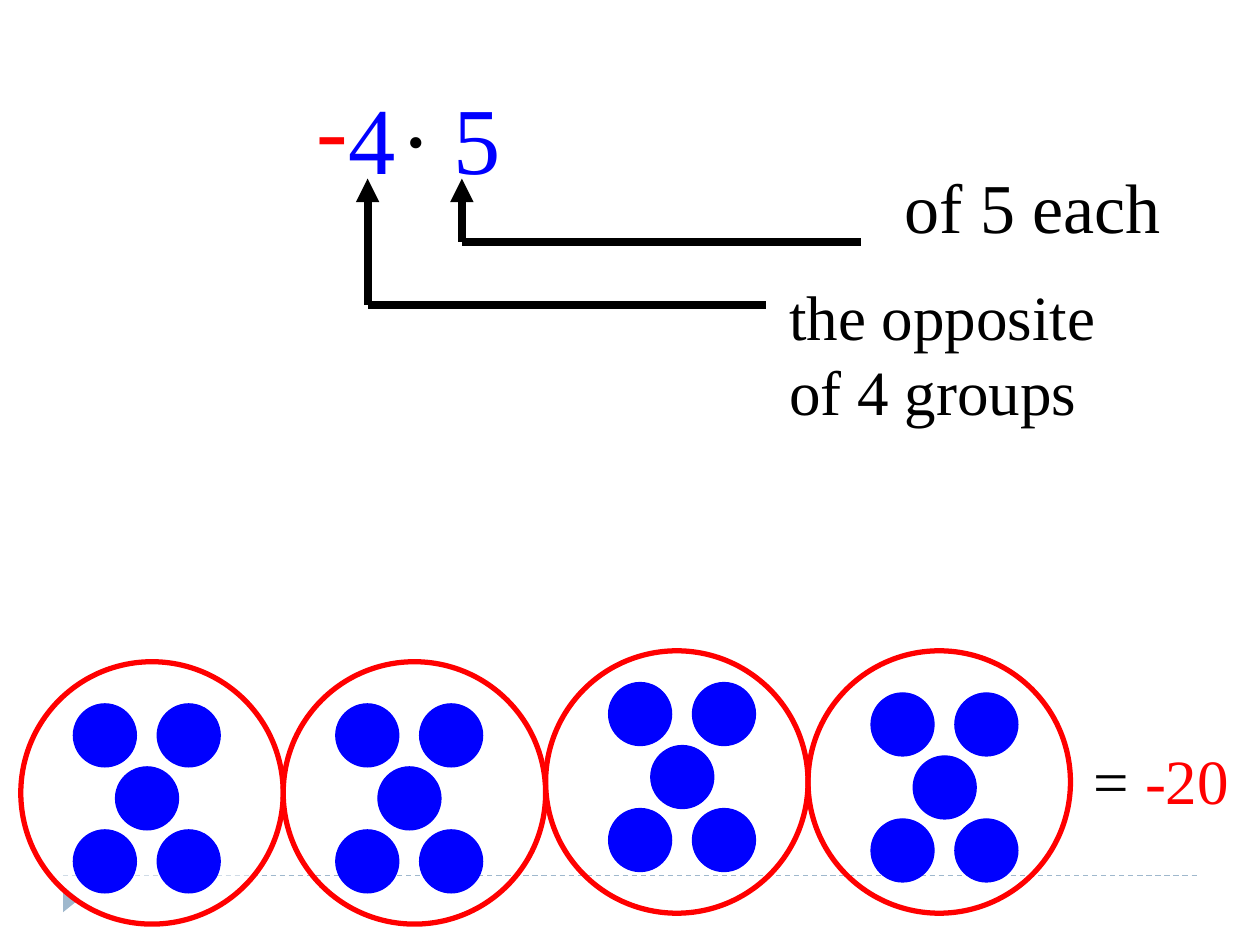
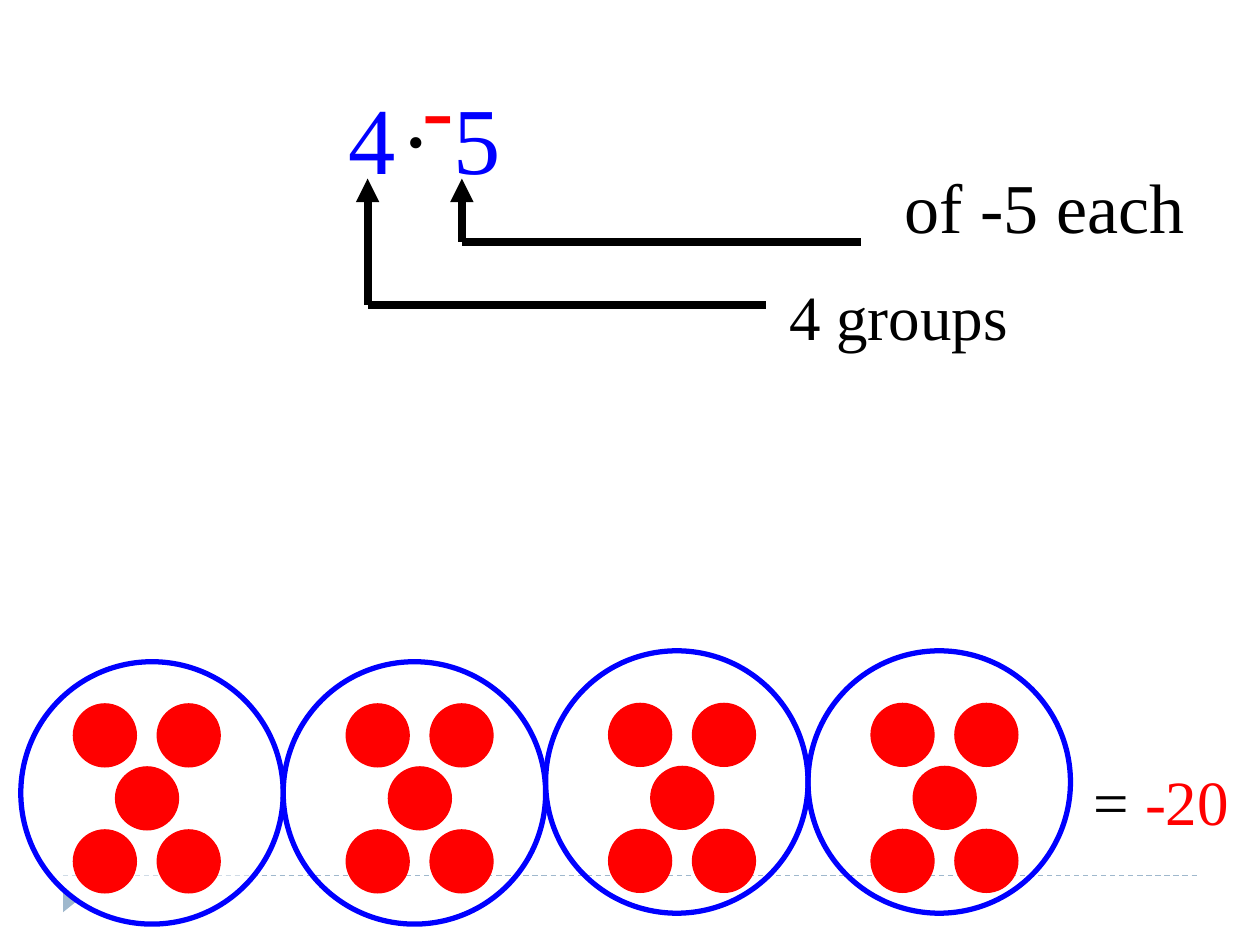
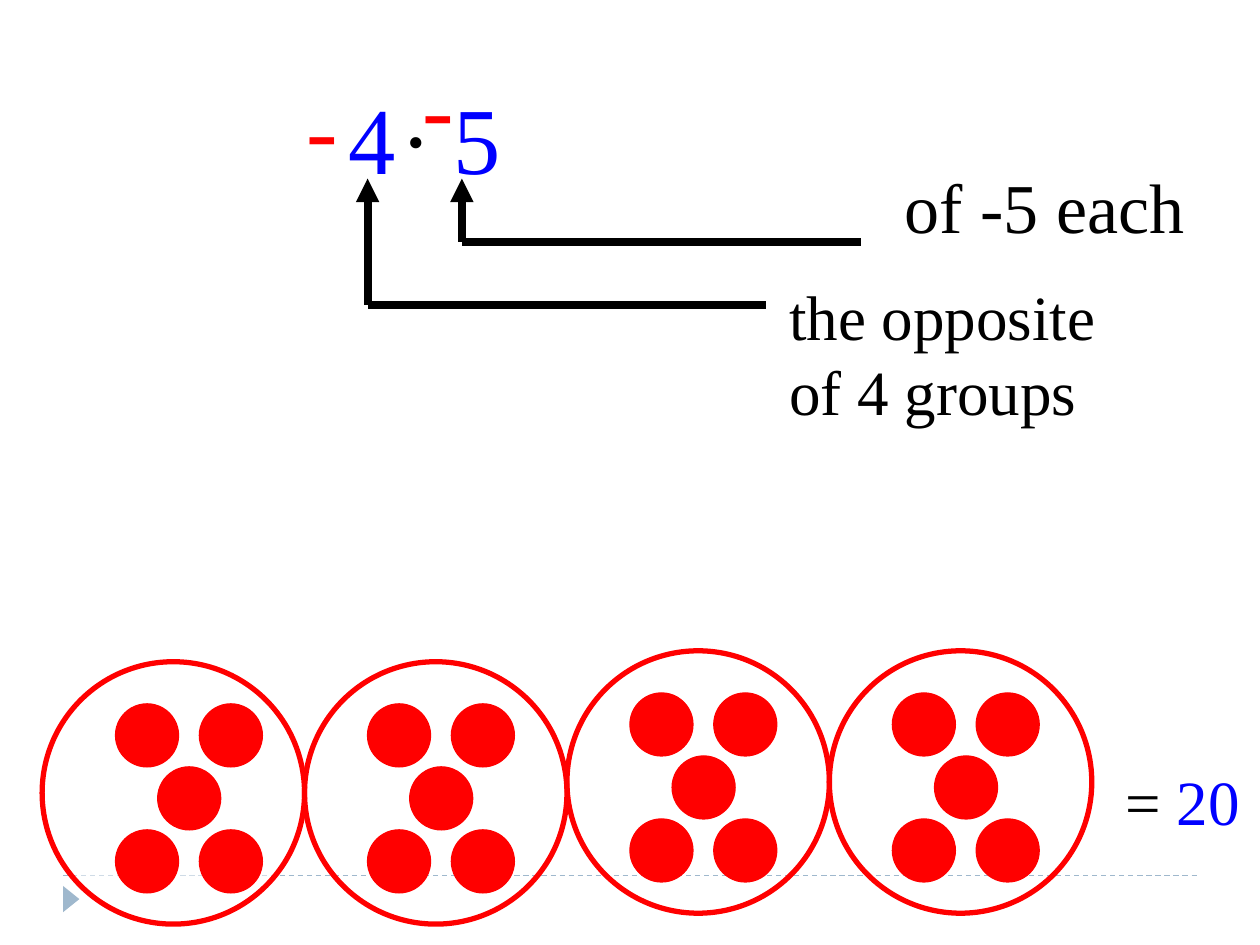
from dataclasses import dataclass

from lxml import etree
from pptx import Presentation
from pptx.dml.color import RGBColor
from pptx.enum import dml, shapes, text
from pptx.oxml import ns
from pptx.util import Cm, Pt

RED = RGBColor(0xFF, 0x00, 0x00)
BLUE = RGBColor(0x00, 0x00, 0xFF)
BLACK = RGBColor(0x00, 0x00, 0x00)
WHITE = RGBColor(0xFF, 0xFF, 0xFF)
STEEL = RGBColor(0x9F, 0xB8, 0xCD)
FONT = "Times New Roman"

RING_SIZE = 5.29
COUNTER_SIZE = 1.27
COUNTER_POSITIONS = [(0, 0), (1.69, 0), (0.85, 1.27), (0, 2.54), (1.69, 2.54)]
RING_TOPS = [13.34, 13.34, 13.12, 13.12]


@dataclass
class Product:
    minus_positions: list
    each_label: str
    groups_label: str
    groups_height: float
    ring_color: RGBColor
    counter_color: RGBColor
    rings_left: float
    counter_offsets: list
    result: str
    result_color: RGBColor
    result_position: tuple


FIRST_MINUS = (6.14, 1.27)
SECOND_MINUS = (8.26, 0.85)

PRODUCTS = [
    Product([FIRST_MINUS], "of 5 each", "the opposite of 4 groups", 3.3, RED, BLUE, 0.42,
            [(1.06, 0.85), (1.06, 0.85), (1.27, 0.64), (1.27, 0.85)],
            "-20", RED, (21.8, 14.82)),
    Product([SECOND_MINUS], "of -5 each", "4 groups", 1.78, BLUE, RED, 0.42,
            [(1.06, 0.85), (1.27, 0.85), (1.27, 1.06), (1.27, 1.06)],
            "-20", RED, (21.8, 15.24)),
    Product([(5.93, 1.27), SECOND_MINUS], "of -5 each", "the opposite of 4 groups", 3.3,
            RED, RED, 0.85,
            [(1.48, 0.85), (1.27, 0.85), (1.27, 0.85), (1.27, 0.85)],
            "20", BLUE, (22.44, 15.24)),
]


def add_label(slide, left, top, width, height, size, *parts):
    """Add one line of text made of (wording, colour) parts."""
    box = slide.shapes.add_textbox(Cm(left), Cm(top), Cm(width), Cm(height))
    frame = box.text_frame
    frame.word_wrap = True
    frame.auto_size = text.MSO_AUTO_SIZE.SHAPE_TO_FIT_TEXT
    paragraph = frame.paragraphs[0]
    properties = paragraph._p.get_or_add_pPr()
    spacing = etree.SubElement(properties, ns.qn("a:spcBef"))
    etree.SubElement(spacing, ns.qn("a:spcPct"), val="50000")
    for wording, color in parts:
        run = paragraph.add_run()
        run.text = wording
        run.font.name = FONT
        run.font.size = Pt(size)
        run.font.color.rgb = color


def add_line(slide, start, end, color=BLACK, width=4.5, arrow=False):
    line = slide.shapes.add_connector(
        shapes.MSO_CONNECTOR.STRAIGHT, *(Cm(value) for value in (*start, *end)))
    line.line.color.rgb = color
    line.line.width = Pt(width)
    if arrow:
        etree.SubElement(line.line._get_or_add_ln(), ns.qn("a:tailEnd"), type="triangle")
    etree.SubElement(line._element.spPr, ns.qn("a:effectLst"))
    return line


def add_circle(slide, left, top, size, line_color, line_width, fill=None):
    circle = slide.shapes.add_shape(
        shapes.MSO_SHAPE.OVAL, Cm(left), Cm(top), Cm(size), Cm(size))
    circle.shadow.inherit = False
    circle.line.color.rgb = line_color
    circle.line.width = Pt(line_width)
    if fill is None:
        circle.fill.background()
    else:
        circle.fill.solid()
        circle.fill.fore_color.rgb = fill
    return circle


def move_footer_to_layout(slide):
    """Draw the dashed rule and marker and hand them to the slide's layout."""
    layout = slide.slide_layout
    for placeholder in list(layout.placeholders):
        placeholder.element.getparent().remove(placeholder.element)
    rule = add_line(slide, (1.27, 17.65), (24.13, 17.65), STEEL, 0.75)
    rule.line.dash_style = dml.MSO_LINE.DASH
    marker = slide.shapes.add_shape(
        shapes.MSO_SHAPE.ISOSCELES_TRIANGLE, Cm(1.17), Cm(17.96), Cm(0.53), Cm(0.33))
    marker.rotation = 90
    marker.shadow.inherit = False
    marker.fill.solid()
    marker.fill.fore_color.rgb = STEEL
    marker.line.fill.background()
    for shape in (rule, marker):
        layout.shapes.element.append(shape.element)


def add_equation(slide, minus_positions):
    for symbol, left, color in [("4", 6.78, BLUE), ("·", 7.82, BLACK), ("5", 8.89, BLUE)]:
        add_label(slide, left, 1.48, 1.69, 2.54, 54, (symbol, color))
    for left, top in minus_positions:
        add_label(slide, left, top, 1.27, 2.54, 54, ("-", RED))


def add_callout(slide, left, bottom):
    """Add an arrow up to a factor and the line from its foot to the label."""
    add_line(slide, (left, bottom), (left, 3.6), arrow=True)
    add_line(slide, (left, bottom), (left + 8.04, bottom))


def add_explanations(slide, product):
    add_callout(slide, 7.41, 6.14)
    add_callout(slide, 9.31, 4.87)
    add_label(slide, 17.99, 3.18, 6.99, 1.96, 40, (product.each_label, BLACK))
    add_label(slide, 15.66, 5.46, 6.99, product.groups_height, 36,
              (product.groups_label, BLACK))


def add_group(slide, left, top, offset, product, veiled):
    """Add a ring of five counters; a veiled ring is half-transparent white."""
    ring = add_circle(slide, left, top, RING_SIZE, product.ring_color, 3,
                      WHITE if veiled else None)
    if veiled:
        color = ring._element.spPr.find(f".//{ns.qn('a:srgbClr')}")
        etree.SubElement(color, ns.qn("a:alpha"), val="50000")
    for x, y in COUNTER_POSITIONS:
        add_circle(slide, left + offset[0] + x, top + offset[1] + y, COUNTER_SIZE,
                   product.counter_color, 0.75, product.counter_color)


def add_counters(slide, product):
    for index, (top, offset) in enumerate(zip(RING_TOPS, product.counter_offsets)):
        add_group(slide, product.rings_left + index * RING_SIZE, top, offset, product,
                  veiled=index == 0)
    add_label(slide, *product.result_position, 4.66, 1.78, 36,
              ("= ", BLACK), (product.result, product.result_color))


def main():
    presentation = Presentation()
    presentation.slide_width = Cm(25.4)
    presentation.slide_height = Cm(19.05)
    blank = presentation.slide_layouts[6]
    for number, product in enumerate(PRODUCTS):
        slide = presentation.slides.add_slide(blank)
        if number == 0:
            move_footer_to_layout(slide)
        add_counters(slide, product)
        add_equation(slide, product.minus_positions)
        add_explanations(slide, product)
    presentation.save("out.pptx")


if __name__ == "__main__":
    main()
